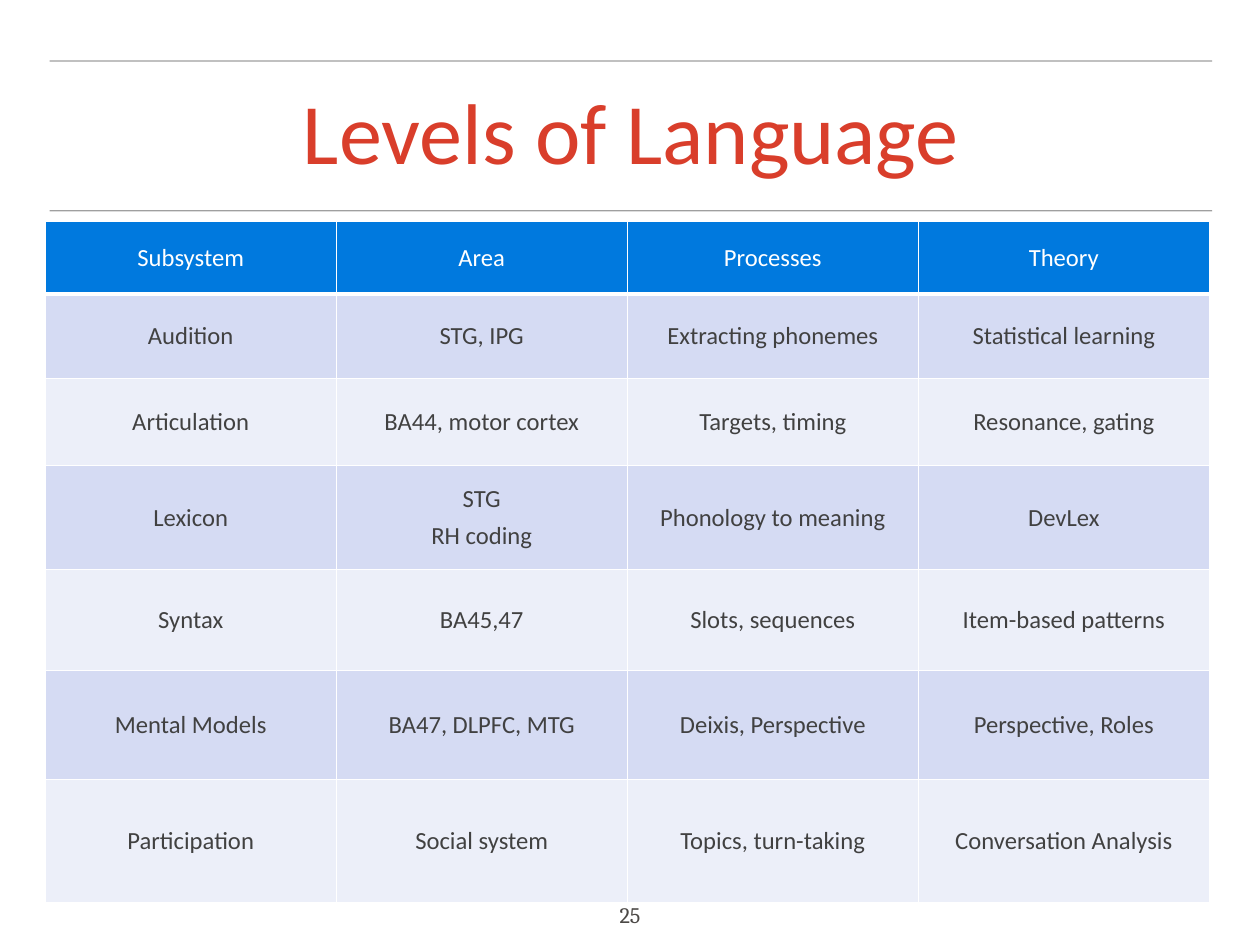
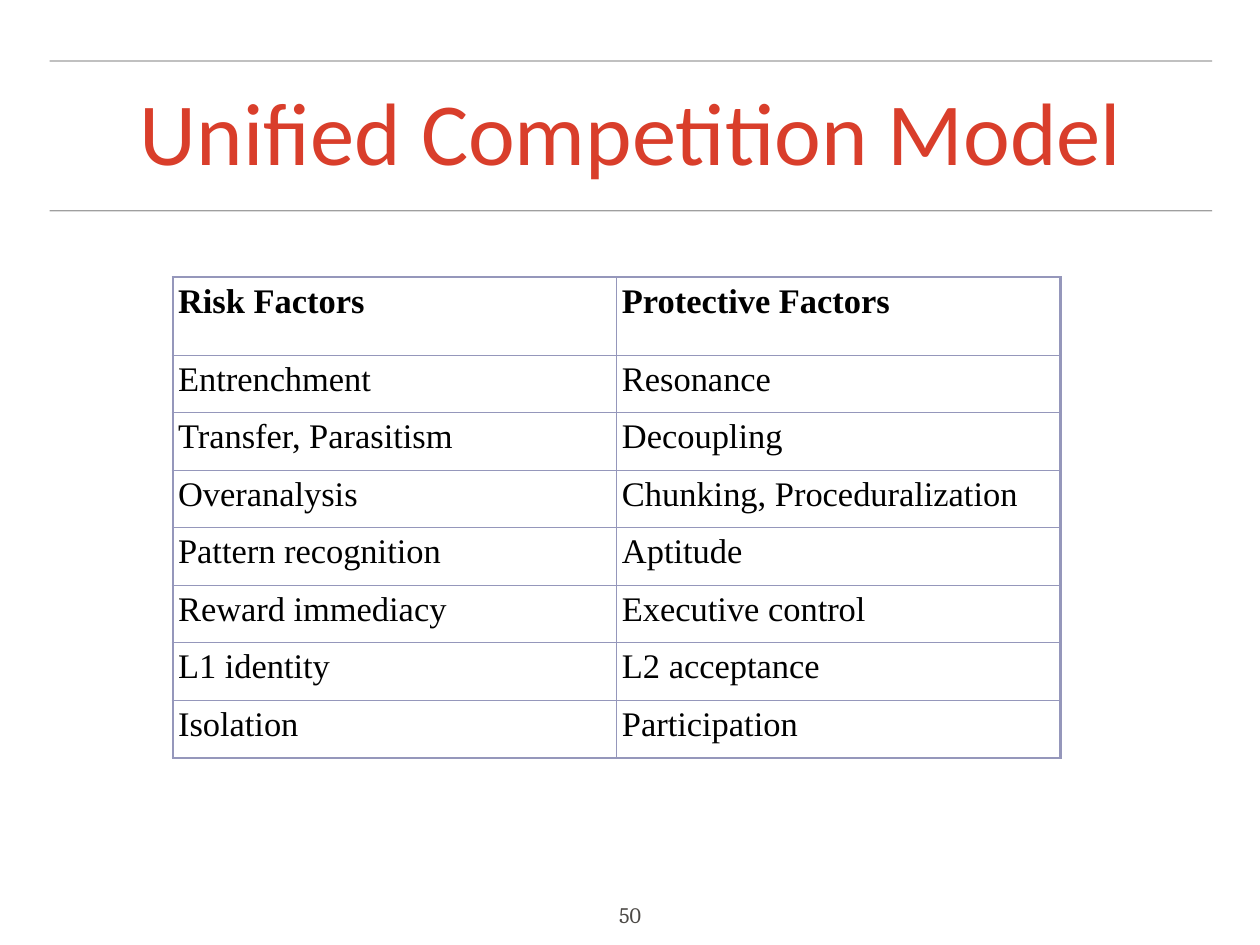
from lxml import etree
from pptx import Presentation
from pptx.dml.color import RGBColor
from pptx.enum.shapes import MSO_CONNECTOR
from pptx.enum.text import MSO_ANCHOR, MSO_AUTO_SIZE, PP_ALIGN
from pptx.oxml.ns import qn
from pptx.util import Inches, Pt

STRAIGHT = MSO_CONNECTOR.STRAIGHT
TOP, MIDDLE = MSO_ANCHOR.TOP, MSO_ANCHOR.MIDDLE
LEFT, CENTER = PP_ALIGN.LEFT, PP_ALIGN.CENTER
NO_AUTOFIT = MSO_AUTO_SIZE.NONE


def rgb(value):
    return RGBColor.from_string(value)


def write(frame, text, font, size, color, bold=False, align=CENTER,
          line_spacing=None, gap=0, inset=0.06):
    """Fill a text frame, one paragraph for each line of the text."""
    frame.margin_left = frame.margin_right = Inches(inset)
    frame.margin_top = frame.margin_bottom = Inches(inset)
    for number, line in enumerate(text.split("\n")):
        paragraph = frame.add_paragraph() if number else frame.paragraphs[0]
        paragraph.alignment = align
        paragraph.space_before = Pt(gap if number else 0)
        if line_spacing:
            paragraph.line_spacing = line_spacing
        run = paragraph.add_run()
        run.text = line
        run.font.name, run.font.size = font, Pt(size)
        run.font.bold = bold
        run.font.color.rgb = rgb(color)


def add_border(cell, side, color, width):
    line = etree.SubElement(cell._tc.get_or_add_tcPr(), qn(f"a:ln{side}"),
                            w=str(Pt(width)))
    fill = etree.SubElement(line, qn("a:solidFill"))
    etree.SubElement(fill, qn("a:srgbClr"), val=color)


class Deck:
    """Shared style, and the slide being built."""
    TITLE_COLOR, RULE_COLOR, NUMBER_COLOR = "D93E2B", "444444", "4C4946"
    LEFT_EDGE, CONTENT_WIDTH = 0.56, 13.12
    RULE_TOPS = (0.69, 2.38)

    def __init__(self):
        self.presentation = Presentation()
        self.presentation.slide_width = Inches(14.22)
        self.presentation.slide_height = Inches(10.67)
        self.slide = None

    def start_slide(self, title, number, title_size):
        title_only = self.presentation.slide_layouts[5]
        self.slide = self.presentation.slides.add_slide(title_only)
        for top in self.RULE_TOPS:
            self.rule(top)
        self.title(title, title_size)
        self.page_number(number)

    def rule(self, top):
        right = self.LEFT_EDGE + self.CONTENT_WIDTH
        rule = self.slide.shapes.add_connector(
            STRAIGHT, Inches(self.LEFT_EDGE), Inches(top), Inches(right), Inches(top))
        rule.line.width = Pt(1)
        rule.line.color.rgb = rgb(self.RULE_COLOR)
        color = rule.line._ln.find(".//" + qn("a:srgbClr"))
        etree.SubElement(color, qn("a:alpha"), val="51000")
        etree.SubElement(rule._element.spPr, qn("a:effectLst"))

    def title(self, text, size):
        title = self.slide.shapes.title
        title.left, title.top = Inches(self.LEFT_EDGE), Inches(0.88)
        title.width, title.height = Inches(self.CONTENT_WIDTH), Inches(1.33)
        frame = title.text_frame
        frame.auto_size, frame.word_wrap = NO_AUTOFIT, True
        frame.vertical_anchor = MIDDLE
        write(frame, text, "Calibri", size, self.TITLE_COLOR, line_spacing=0.9)

    def page_number(self, number):
        box = self.slide.shapes.add_textbox(
            Inches(6.92), Inches(10.12), Inches(0.38), Inches(0.44))
        box.text_frame.word_wrap = False
        write(box.text_frame, str(number), "Cambria", 18, self.NUMBER_COLOR)

    def table(self, rows, left, top, width, heights, border, look,
              outer=1, header_rule=1, anchor=TOP):
        """look(row) gives the cell fill (or None) and the text format of a row."""
        row_count, column_count = len(rows), len(rows[0])
        table = self.slide.shapes.add_table(
            row_count, column_count, Inches(left), Inches(top),
            Inches(width), Inches(sum(heights))).table
        table.first_row = table.horz_banding = False
        for row, (texts, height) in enumerate(zip(rows, heights)):
            table.rows[row].height = Inches(height)
            fill, text_format = look(row)
            for column, text in enumerate(texts):
                cell = table.cell(row, column)
                # Borders come before the fill in the cell properties
                widths = {
                    "L": outer if column == 0 else 1,
                    "R": outer if column == column_count - 1 else 1,
                    "T": {0: outer, 1: header_rule}.get(row, 1),
                    "B": {0: header_rule, row_count - 1: outer}.get(row, 1),
                }
                for side, line_width in widths.items():
                    add_border(cell, side, border, line_width)
                if fill:
                    cell.fill.solid()
                    cell.fill.fore_color.rgb = rgb(fill)
                else:
                    cell.fill.background()
                inset = text_format.get("inset", 0.06)
                cell.margin_left = cell.margin_right = Inches(inset)
                cell.margin_top = cell.margin_bottom = Inches(inset)
                cell.vertical_anchor = anchor
                write(cell.text_frame, text, **text_format)


def level_look(row):
    fill = "0079DE" if row == 0 else ("ECEFF9", "D5DBF3")[row % 2]
    color = "414141" if row else "FFFFFF"
    return fill, dict(font="Calibri", size=20, color=color, gap=6, inset=0)


def factor_look(row):
    return None, dict(font="Times New Roman", size=28, color="000000",
                      bold=row == 0, align=LEFT)


LEVELS = [
    ("Subsystem", "Area", "Processes", "Theory"),
    ("Audition", "STG, IPG", "Extracting phonemes", "Statistical learning"),
    ("Articulation", "BA44, motor cortex", "Targets, timing", "Resonance, gating"),
    ("Lexicon", "STG\nRH coding", "Phonology to meaning", "DevLex"),
    ("Syntax", "BA45,47", "Slots, sequences", "Item-based patterns"),
    ("Mental Models", "BA47, DLPFC, MTG", "Deixis, Perspective", "Perspective, Roles"),
    ("Participation", "Social system", "Topics, turn-taking", "Conversation Analysis"),
]
FACTORS = [
    ("Risk Factors", "Protective Factors"),
    ("Entrenchment", "Resonance"),
    ("Transfer, Parasitism", "Decoupling"),
    ("Overanalysis", "Chunking, Proceduralization"),
    ("Pattern recognition", "Aptitude"),
    ("Reward immediacy", "Executive control"),
    ("L1 identity", "L2 acceptance"),
    ("Isolation", "Participation"),
]


def main():
    deck = Deck()

    # Levels of language
    deck.start_slide("Levels of Language", 25, title_size=70)
    deck.table(LEVELS, 0.51, 2.5, 13.14, [0.82, 0.95, 0.99, 1.17, 1.14, 1.23, 1.39],
               "FFFFFF", level_look, header_rule=3, anchor=MIDDLE)

    # Risk and protective factors
    deck.start_slide("Unified Competition Model", 50, title_size=72)
    deck.table(FACTORS, 1.95, 3.13, 10.02, [0.88] + [0.65] * (len(FACTORS) - 1),
               "9597BB", factor_look, outer=2.25)

    deck.presentation.save("out.pptx")


if __name__ == "__main__":
    main()
